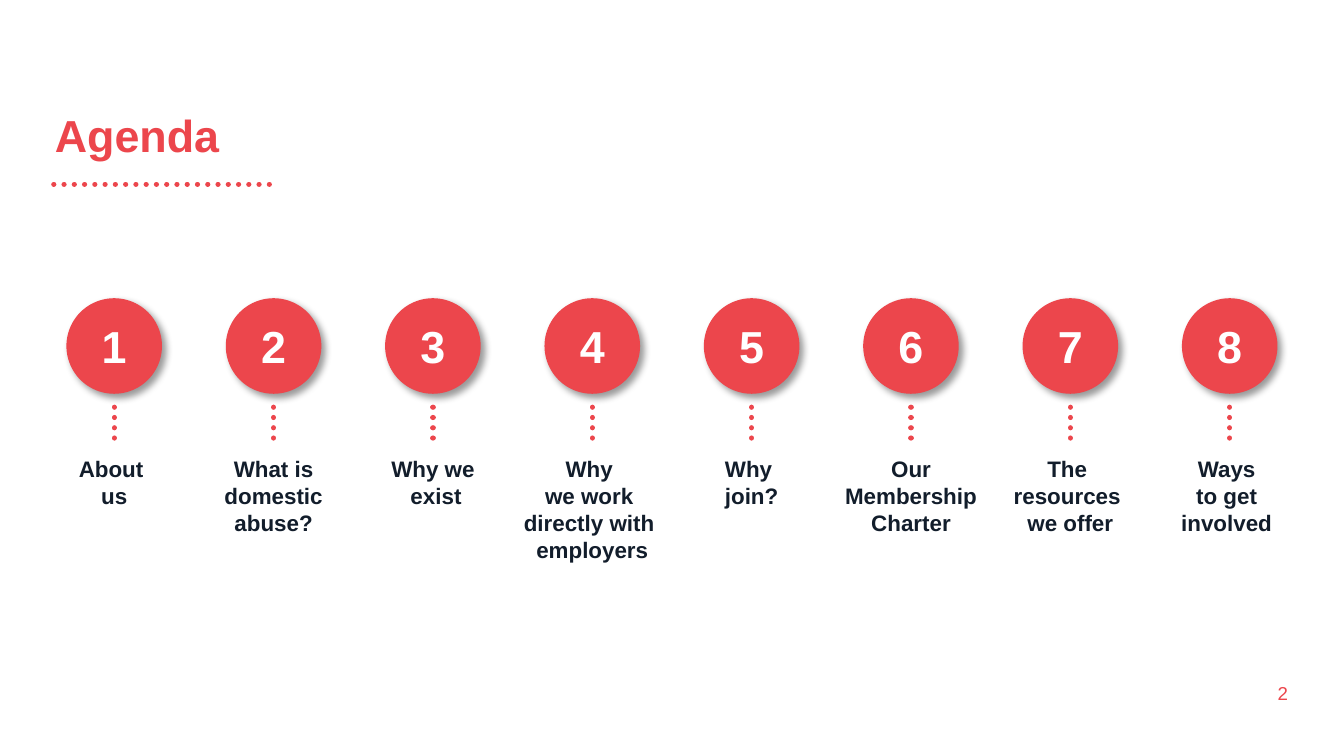
"""Build the agenda slide: eight numbered steps under a dotted title rule."""
import dataclasses

import lxml.etree
import pptx
import pptx.dml.color
import pptx.enum.shapes
import pptx.enum.text
import pptx.oxml
import pptx.oxml.ns
import pptx.util

Pt = pptx.util.Pt
ALIGN = pptx.enum.text.PP_ALIGN
ANCHOR = pptx.enum.text.MSO_ANCHOR
COLORS = {"red": "EC464C", "navy": "121D2B", "white": "FFFFFF", "black": "000000"}
FONT = "Arial"
FIRST, PITCH = 61.2, 85.37
DISC, DISC_TOP = 51.2, 159.8
STEM_TOP, STEM_END = 216, 234.7
LABEL_TOP, LABEL_WIDE = 240.5, 102.2


@dataclasses.dataclass
class Step:
    """One agenda item with its label and label height."""
    label: str
    high: float


@dataclasses.dataclass
class Style:
    """Look of a piece of text."""
    size: float
    color: str
    bold: bool = True
    align: ALIGN = ALIGN.CENTER
    anchor: ANCHOR = ANCHOR.TOP


STEPS = [
    Step("About \nus", 36),
    Step("What is domestic\vabuse?", 51),
    Step("Why we\v exist", 36),
    Step("Why \vwe work \vdirectly with \vemployers", 65.5),
    Step("Why \vjoin?", 36),
    Step("Our Membership Charter", 51),
    Step("The \vresources \vwe offer", 51),
    Step("Ways \vto get \vinvolved ", 51),
]
TITLE = Style(24, "red", align=ALIGN.LEFT, anchor=ANCHOR.BOTTOM)
PAGE = Style(10, "red", False, ALIGN.RIGHT, ANCHOR.BOTTOM)
NUMBER = Style(24, "white", anchor=ANCHOR.MIDDLE)
LABEL = Style(12, "navy")


def tint(name: str) -> pptx.dml.color.RGBColor:
    """Return a named colour."""
    return pptx.dml.color.RGBColor.from_string(COLORS[name])


def write(shape, text: str, style: Style) -> None:
    """Fill a shape with styled text."""
    frame = shape.text_frame
    frame.text = text
    frame.word_wrap = True
    frame.vertical_anchor = style.anchor
    for para in frame.paragraphs:
        para.alignment = style.align
        for run in para.runs:
            font = run.font
            font.name, font.size, font.bold = FONT, Pt(style.size), style.bold
            font.color.rgb = tint(style.color)


def add_text(slide, left: float, top: float, wide: float, high: float,
             text: str, style: Style):
    """Add a text box and return it."""
    box = slide.shapes.add_textbox(Pt(left), Pt(top), Pt(wide), Pt(high))
    write(box, text, style)
    return box


def add_dots(slide, left: float, top: float, right: float, end: float) -> None:
    """Add a line of round dots."""
    line = slide.shapes.add_connector(
        pptx.enum.shapes.MSO_CONNECTOR.STRAIGHT, Pt(left), Pt(top), Pt(right), Pt(end))
    line.line.width = Pt(2.75)
    line.line.color.rgb = tint("red")
    stroke = line.line._get_or_add_ln()
    stroke.set("cap", "rnd")
    dash = lxml.etree.SubElement(stroke, pptx.oxml.ns.qn("a:prstDash"))
    dash.set("val", "sysDot")
    lxml.etree.SubElement(line._element.spPr, pptx.oxml.ns.qn("a:effectLst"))


def add_disc(slide, left: float, text: str) -> None:
    """Add a numbered disc with a soft shadow."""
    disc = slide.shapes.add_shape(
        pptx.enum.shapes.MSO_SHAPE.OVAL, Pt(left), Pt(DISC_TOP), Pt(DISC), Pt(DISC))
    disc.fill.solid()
    disc.fill.fore_color.rgb = tint("red")
    disc.line.fill.background()
    disc.shadow.inherit = False
    effects = disc._element.spPr.find(pptx.oxml.ns.qn("a:effectLst"))
    effects.append(pptx.oxml.parse_xml(
        f'<a:outerShdw {pptx.oxml.ns.nsdecls("a")} blurRad="{Pt(4)}" dist="{Pt(3)}" '
        f'dir="2700000" algn="tl" rotWithShape="0"><a:srgbClr val="{COLORS["black"]}">'
        '<a:alpha val="40000"/></a:srgbClr></a:outerShdw>'))
    write(disc, text, NUMBER)


def add_step(slide, index: int, step: Step) -> None:
    """Add a disc, its stem and its label."""
    mid = FIRST + index * PITCH
    add_disc(slide, mid - DISC / 2, str(index + 1))
    box = add_text(slide, mid - LABEL_WIDE / 2, LABEL_TOP, LABEL_WIDE, step.high,
                   step.label, LABEL)
    box.text_frame.auto_size = pptx.enum.text.MSO_AUTO_SIZE.SHAPE_TO_FIT_TEXT
    add_dots(slide, mid, STEM_END, mid, STEM_TOP)


def main() -> None:
    """Build and save the slide."""
    deck = pptx.Presentation()
    deck.slide_width, deck.slide_height = Pt(720), Pt(405)
    slide = deck.slides.add_slide(deck.slide_layouts[6])
    add_dots(slide, 28.8, 98.7, 148.3, 98.7)
    add_text(slide, 482.4, 362.9, 214.6, 18, "2", PAGE)
    for index, step in enumerate(STEPS):
        add_step(slide, index, step)
    title = add_text(slide, 22.3, 30.2, 328.3, 60.5, "Agenda", TITLE)
    title.text_frame.paragraphs[0].line_spacing = 0.9
    deck.save("out.pptx")


if __name__ == "__main__":
    main()
